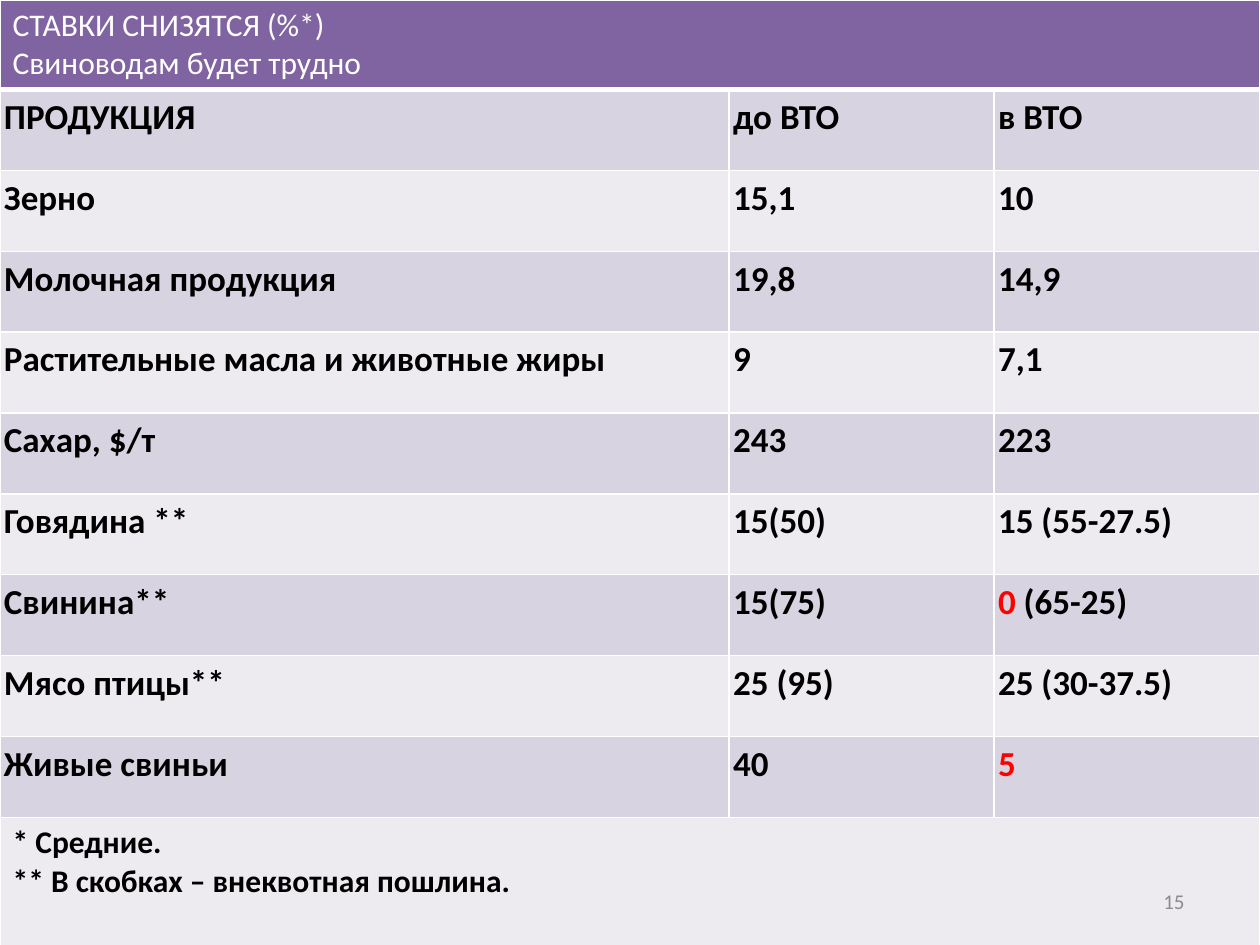
from dataclasses import dataclass

from lxml import etree
from pptx import Presentation
from pptx.dml.color import RGBColor
from pptx.enum.text import MSO_ANCHOR, PP_ALIGN
from pptx.oxml.ns import qn
from pptx.util import Cm, Pt

MIDDLE = MSO_ANCHOR.MIDDLE
RIGHT = PP_ALIGN.RIGHT

WIDTHS = (14.7, 5.34, 5.36)
HEIGHTS = (1.8, *[1.63] * 9, 2.58)
HEAD = ("СТАВКИ СНИЗЯТСЯ (%*)", "Свиноводам будет трудно")
NOTES = ("* Средние.", "** В скобках – внеквотная пошлина.")
RATES = (
    ("ПРОДУКЦИЯ", "до ВТО", "в ВТО"),
    ("Зерно", "15,1", "10"),
    ("Молочная продукция", "19,8", "14,9"),
    ("Растительные масла и животные жиры", "9", "7,1"),
    ("Сахар, $/т", "243", "223"),
    ("Говядина **", "15(50)", "15 (55-27.5)"),
    ("Свинина**", "15(75)", (("0", True), (" (65-25)", False))),
    ("Мясо птицы**", "25 (95)", "25 (30-37.5)"),
    ("Живые свиньи", "40", (("5", True),)),
)


@dataclass(frozen=True)
class Theme:
    """Colours, font and type sizes of the slide."""
    font: str = "Calibri"
    head: str = "8064A2"
    dark: str = "D8D3E0"
    light: str = "EDEAF0"
    white: str = "FFFFFF"
    black: str = "000000"
    red: str = "FF0000"
    grey: str = "8C8C8C"
    body: int = 20
    note: int = 18
    small: int = 12


class Deck:
    """Holds the theme and the current slide, and draws on it."""

    def __init__(self, theme, slide):
        self.theme = theme
        self.slide = slide

    def run(self, para, text, size, color, bold=False):
        """Add one styled run to a paragraph."""
        run = para.add_run()
        run.text = text
        run.font.name = self.theme.font
        run.font.size = Pt(size)
        run.font.bold = bold
        run.font.color.rgb = RGBColor.from_string(color)

    def label(self, text, left, top, width, height):
        """Add a small grey label set to the right."""
        box = self.slide.shapes.add_textbox(Cm(left), Cm(top), Cm(width), Cm(height))
        frame = box.text_frame
        frame.word_wrap = True
        frame.vertical_anchor = MIDDLE
        para = frame.paragraphs[0]
        para.alignment = RIGHT
        self.run(para, text, self.theme.small, self.theme.grey)

    def grid(self, widths, heights):
        """Add an empty table at the top left corner."""
        frame = self.slide.shapes.add_table(
            len(heights), len(widths), 0, 0, Cm(sum(widths)), Cm(sum(heights)))
        table = frame.table
        for col, width in zip(table.columns, widths):
            col.width = Cm(width)
        for row, height in zip(table.rows, heights):
            row.height = Cm(height)
        return table

    def paint(self, cell, color, base=1):
        """Give a cell its white borders and its fill."""
        props = cell._tc.get_or_add_tcPr()
        for side, width in (("L", 1), ("R", 1), ("T", 1), ("B", base)):
            line = etree.SubElement(props, qn(f"a:ln{side}"), w=str(Pt(width)))
            fill = etree.SubElement(line, qn("a:solidFill"))
            etree.SubElement(fill, qn("a:srgbClr"), val=self.theme.white)
        cell.fill.solid()
        cell.fill.fore_color.rgb = RGBColor.from_string(color)

    def band(self, table, index, lines, fill, color, bold, base=1):
        """Fill a row merged across the table with lines of text."""
        cells = list(table.rows[index].cells)
        for cell in cells:
            self.paint(cell, fill, base)
        cells[0].merge(cells[-1])
        frame = cells[0].text_frame
        for spot, text in enumerate(lines):
            para = frame.add_paragraph() if spot else frame.paragraphs[0]
            self.run(para, text, self.theme.note, color, bold)

    def cell(self, cell, parts, fill):
        """Fill a body cell with text or with (text, is red) parts."""
        theme = self.theme
        self.paint(cell, fill)
        cell.margin_left = cell.margin_right = Cm(0.08)
        cell.margin_top = cell.margin_bottom = 0
        para = cell.text_frame.paragraphs[0]
        para.line_spacing = 1.15
        if isinstance(parts, str):
            parts = ((parts, False),)
        for text, red in parts:
            self.run(para, text, theme.body, theme.red if red else theme.black, True)


def main():
    """Build the slide of duty rates."""
    show = Presentation()
    show.slide_width, show.slide_height = Cm(25.4), Cm(19.05)
    theme = Theme()
    deck = Deck(theme, show.slides.add_slide(show.slide_layouts[6]))
    table = deck.grid(WIDTHS, HEIGHTS)
    deck.band(table, 0, HEAD, theme.head, theme.white, False, base=3)
    for row, rates in enumerate(RATES, 1):
        fill = theme.dark if row % 2 else theme.light
        for col, parts in enumerate(rates):
            deck.cell(table.cell(row, col), parts, fill)
    deck.band(table, len(RATES) + 1, NOTES, theme.light, theme.black, True)
    deck.label("15", 18.2, 17.66, 5.93, 1.01)
    show.save("out.pptx")


if __name__ == "__main__":
    main()
